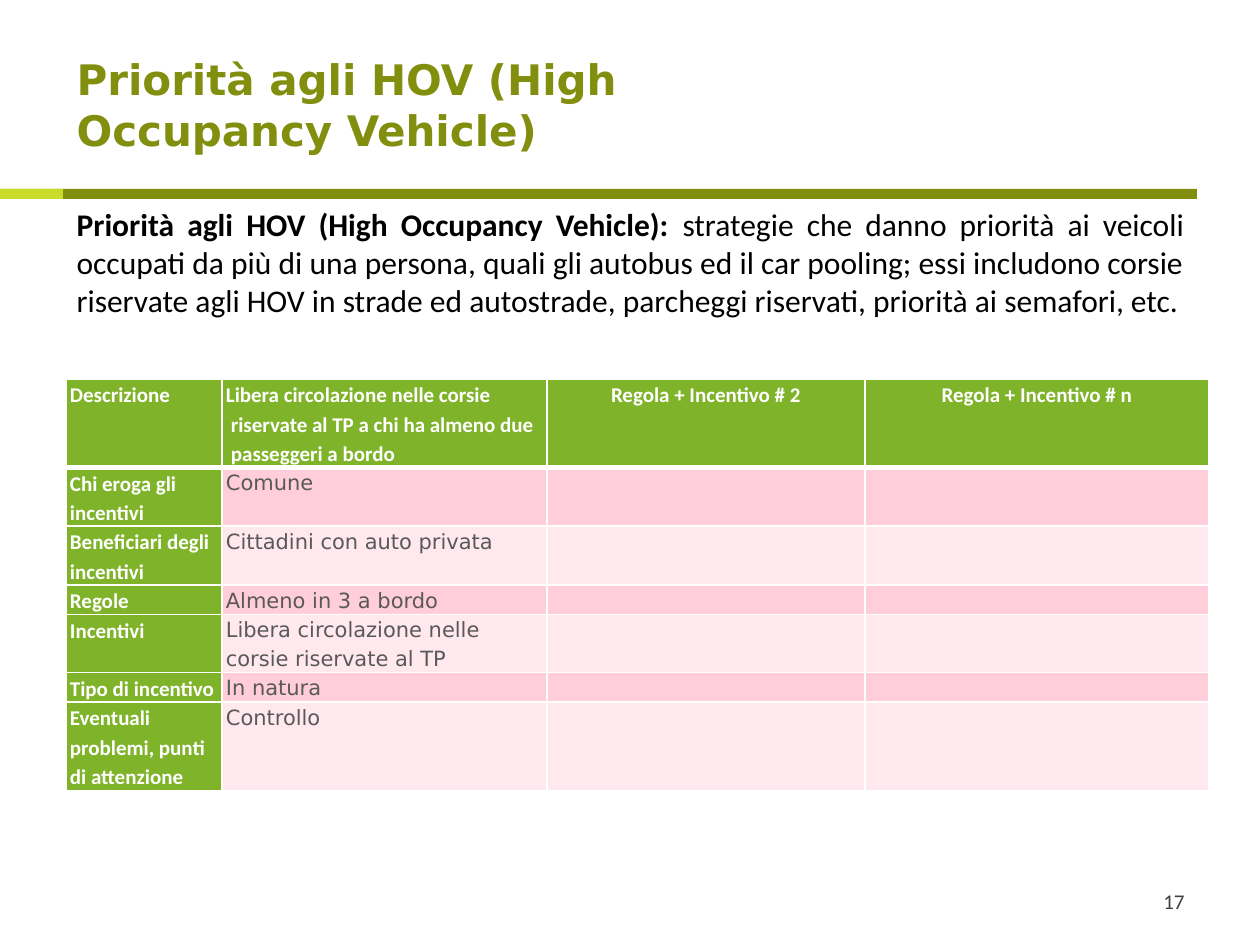
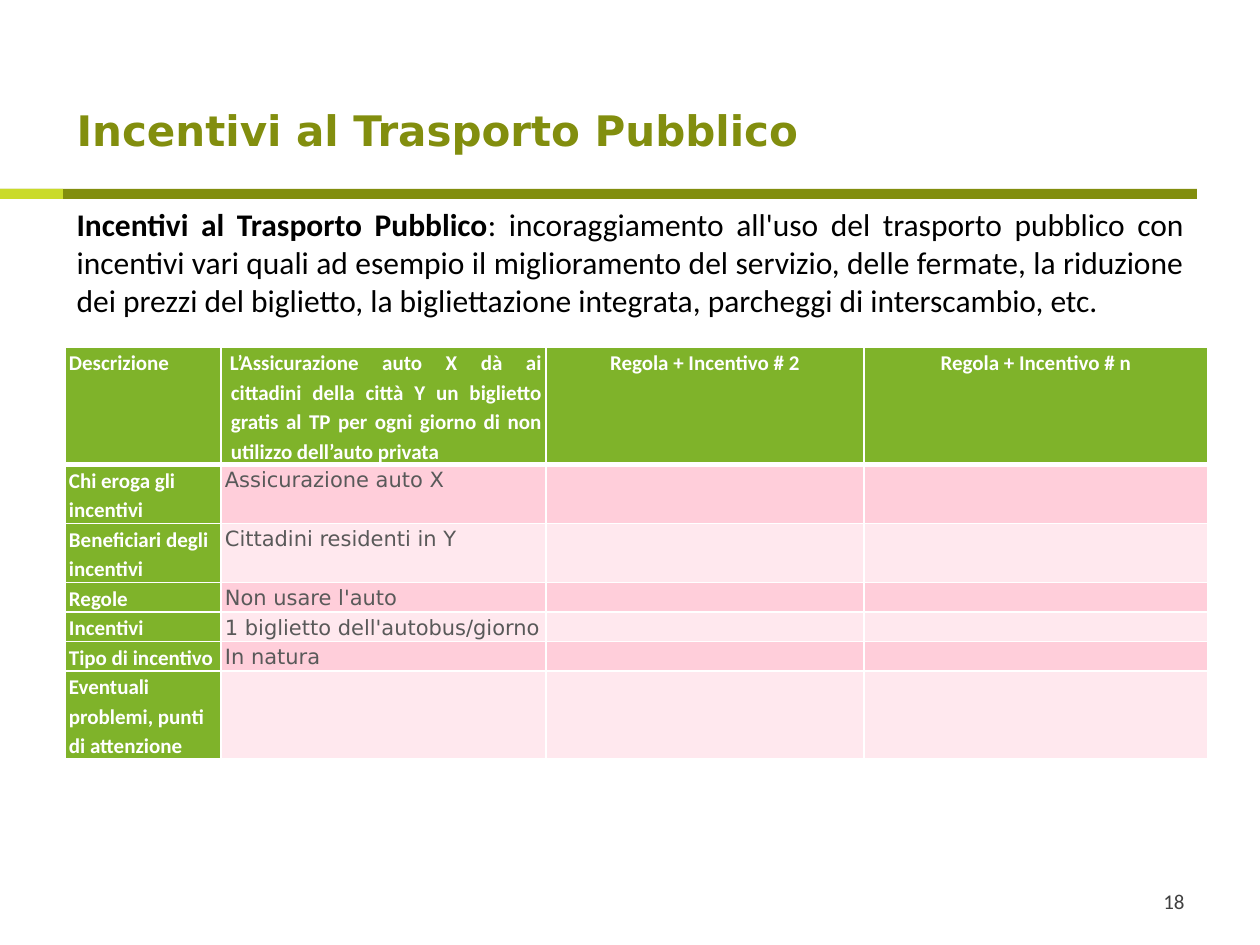
from lxml import etree
from pptx import Presentation
from pptx.dml.color import RGBColor
from pptx.enum.shapes import MSO_SHAPE
from pptx.enum.text import MSO_ANCHOR, MSO_AUTO_SIZE, PP_ALIGN
from pptx.oxml.ns import qn
from pptx.util import Pt

RECTANGLE = MSO_SHAPE.RECTANGLE
TOP, MIDDLE, BOTTOM = MSO_ANCHOR.TOP, MSO_ANCHOR.MIDDLE, MSO_ANCHOR.BOTTOM
LEFT, CENTER, RIGHT, JUSTIFY = (PP_ALIGN.LEFT, PP_ALIGN.CENTER,
                                PP_ALIGN.RIGHT, PP_ALIGN.JUSTIFY)
NO_AUTOSIZE = MSO_AUTO_SIZE.NONE

COLORS = {
    "olive": "828E0E", "lime": "CADB2A", "green": "7FB32A",
    "pink": "FFCEDA", "pale_pink": "FFE8EE", "white": "FFFFFF",
    "black": "000000", "gray": "595959", "page": "404040",
}
TEXT_FONT, DISPLAY_FONT = "Calibri", "DejaVu Sans"

PX_PER_INCH = 126
COLUMN_WIDTHS = (156, 325, 318, 344)
LINE_HEIGHT = 29
ROW_LABELS = ("Chi eroga gli incentivi", "Beneficiari degli incentivi", "Regole",
              "Incentivi", "Tipo di incentivo",
              "Eventuali problemi, punti di attenzione")
OTHER_RULES = ("Regola + Incentivo # 2", "Regola + Incentivo # n")


def px(length):
    return round(length * 914400 / PX_PER_INCH)


def rgb(name):
    return RGBColor.from_string(COLORS[name])


class Deck:
    def __init__(self):
        self.prs = Presentation()
        self.prs.slide_width, self.prs.slide_height = px(1260), px(945)
        self.slide = None

    def new_slide(self, title, number):
        self.slide = self.prs.slides.add_slide(self.prs.slide_layouts[1])
        self.band(0, 1197, "olive")
        self.band(0, 63, "lime")
        self.title(title)
        self.page_number(number)

    def style(self, run, size, color, font=TEXT_FONT, bold=False):
        run.font.size, run.font.name, run.font.bold = Pt(size), font, bold
        run.font.color.rgb = rgb(color)

    def place(self, shape, left, top, width, height, anchor):
        shape.left, shape.top = px(left), px(top)
        shape.width, shape.height = px(width), px(height)
        frame = shape.text_frame
        frame.word_wrap, frame.auto_size = True, NO_AUTOSIZE
        frame.vertical_anchor = anchor
        return frame.paragraphs[0]

    def band(self, left, width, color):
        shape = self.slide.shapes.add_shape(RECTANGLE, px(left), px(189), px(width), px(10))
        shape.shadow.inherit = False
        shape.fill.solid()
        shape.fill.fore_color.rgb = rgb(color)
        shape.line.fill.background()

    def title(self, text):
        paragraph = self.place(self.slide.shapes.title, 64, 73, 810, 88, BOTTOM)
        paragraph.text, paragraph.alignment = text, LEFT
        self.style(paragraph.runs[0], 24, "olive", DISPLAY_FONT, True)

    def page_number(self, number):
        box = self.slide.shapes.add_textbox(0, 0, 0, 0)
        paragraph = self.place(box, 903, 876, 294, 50, MIDDLE)
        paragraph.text, paragraph.alignment = str(number), RIGHT
        self.style(paragraph.runs[0], 12, "page")

    def definition(self, term, meaning, height):
        paragraph = self.place(self.slide.placeholders[1], 64, 199, 1133, height, TOP)
        paragraph.alignment, paragraph.space_before = JUSTIFY, Pt(0)
        self.indent(paragraph, 0, 0)
        etree.SubElement(paragraph._p.get_or_add_pPr(), qn("a:buNone"))
        for text, bold in ((term, True), (meaning, False)):
            run = paragraph.add_run()
            run.text = text
            self.style(run, 18, "black", bold=bold)

    def indent(self, paragraph, margin, first_line):
        properties = paragraph._p.get_or_add_pPr()
        properties.set("marL", str(px(margin)))
        properties.set("indent", str(px(first_line)))

    def borders(self, cell, top, bottom):
        properties = cell._tc.get_or_add_tcPr()
        for side, points in (("L", 1), ("R", 1), ("T", top), ("B", bottom)):
            line = etree.SubElement(properties, qn(f"a:ln{side}"), w=str(Pt(points)))
            fill = etree.SubElement(line, qn("a:solidFill"))
            etree.SubElement(fill, qn("a:srgbClr"), val=COLORS["white"])

    def cell(self, cell, text, row, column):
        is_header, is_label = row == 0, column == 0
        self.borders(cell, 3 if row == 1 else 1, 3 if is_header else 1)
        cell.fill.solid()
        cell.fill.fore_color.rgb = rgb("green" if is_header or is_label
                                       else "pink" if row % 2 else "pale_pink")
        cell.margin_left = cell.margin_right = px(4)
        cell.margin_top = cell.margin_bottom = 0
        paragraph = cell.text_frame.paragraphs[0]
        if not text:
            # Keep the empty cell from stretching its row
            etree.SubElement(paragraph._p, qn("a:endParaRPr"), sz="1200")
            return
        paragraph.text, paragraph.line_spacing = text, 1.15
        if is_label:
            paragraph.space_after = Pt(10)
        if is_header or is_label:
            self.style(paragraph.runs[0], 12, "white", bold=True)
        else:
            self.style(paragraph.runs[0], 12, "gray", DISPLAY_FONT)

    def incentive_table(self, left, top, rule, answers, line_counts,
                        rule_alignment, rule_indent):
        rows = [("Descrizione", rule, *OTHER_RULES)]
        rows += [(label, answer, "", "") for label, answer in zip(ROW_LABELS, answers)]
        table = self.slide.shapes.add_table(
            len(rows), len(COLUMN_WIDTHS), px(left), px(top),
            px(sum(COLUMN_WIDTHS)), px(LINE_HEIGHT * sum(line_counts))).table
        table.horz_banding = False
        for column, width in zip(table.columns, COLUMN_WIDTHS):
            column.width = px(width)
        for r, (texts, lines) in enumerate(zip(rows, line_counts)):
            table.rows[r].height = px(LINE_HEIGHT * lines)
            for c, text in enumerate(texts):
                self.cell(table.cell(r, c), text, r, c)
        # Header alignment and hanging indents
        formats = ((rule_alignment, rule_indent), (CENTER, (5, -5)), (CENTER, (5, -5)))
        for c, (alignment, indents) in enumerate(formats, start=1):
            heading = table.cell(0, c).text_frame.paragraphs[0]
            heading.alignment = alignment
            self.indent(heading, *indents)


def main():
    deck = Deck()

    # High occupancy vehicles
    deck.new_slide("Priorità agli HOV (High Occupancy Vehicle)", 17)
    deck.definition(
        "Priorità agli HOV (High Occupancy Vehicle):",
        " strategie che danno priorità ai veicoli occupati da più di una persona, quali gli "
        "autobus ed il car pooling; essi includono corsie riservate agli HOV in strade ed "
        "autostrade, parcheggi riservati, priorità ai semafori, etc.", 165)
    deck.incentive_table(
        66, 379,
        "Libera circolazione nelle corsie riservate al TP a chi ha almeno due passeggeri a bordo",
        ("Comune", "Cittadini con auto privata", "Almeno in 3 a bordo",
         "Libera circolazione nelle corsie riservate al TP", "In natura", "Controllo"),
        (3, 2, 2, 1, 2, 1, 3), LEFT, (5, -5))

    # Public transport
    deck.new_slide("Incentivi al Trasporto Pubblico", 18)
    deck.definition(
        "Incentivi al Trasporto Pubblico",
        ": incoraggiamento all'uso del trasporto pubblico con incentivi vari quali ad esempio "
        "il miglioramento del servizio, delle fermate, la riduzione dei prezzi del biglietto, "
        "la bigliettazione integrata, parcheggi di interscambio, etc.", 127)
    deck.incentive_table(
        65, 347,
        "L’Assicurazione auto X dà ai cittadini della città Y un biglietto gratis al TP "
        "per ogni giorno di non utilizzo dell’auto privata",
        ("Assicurazione auto X", "Cittadini residenti in Y", "Non usare l'auto",
         "1 biglietto dell'autobus/giorno", "In natura", ""),
        (4, 2, 2, 1, 1, 1, 3), JUSTIFY, (6, -1))

    deck.prs.save("out.pptx")


if __name__ == "__main__":
    main()
